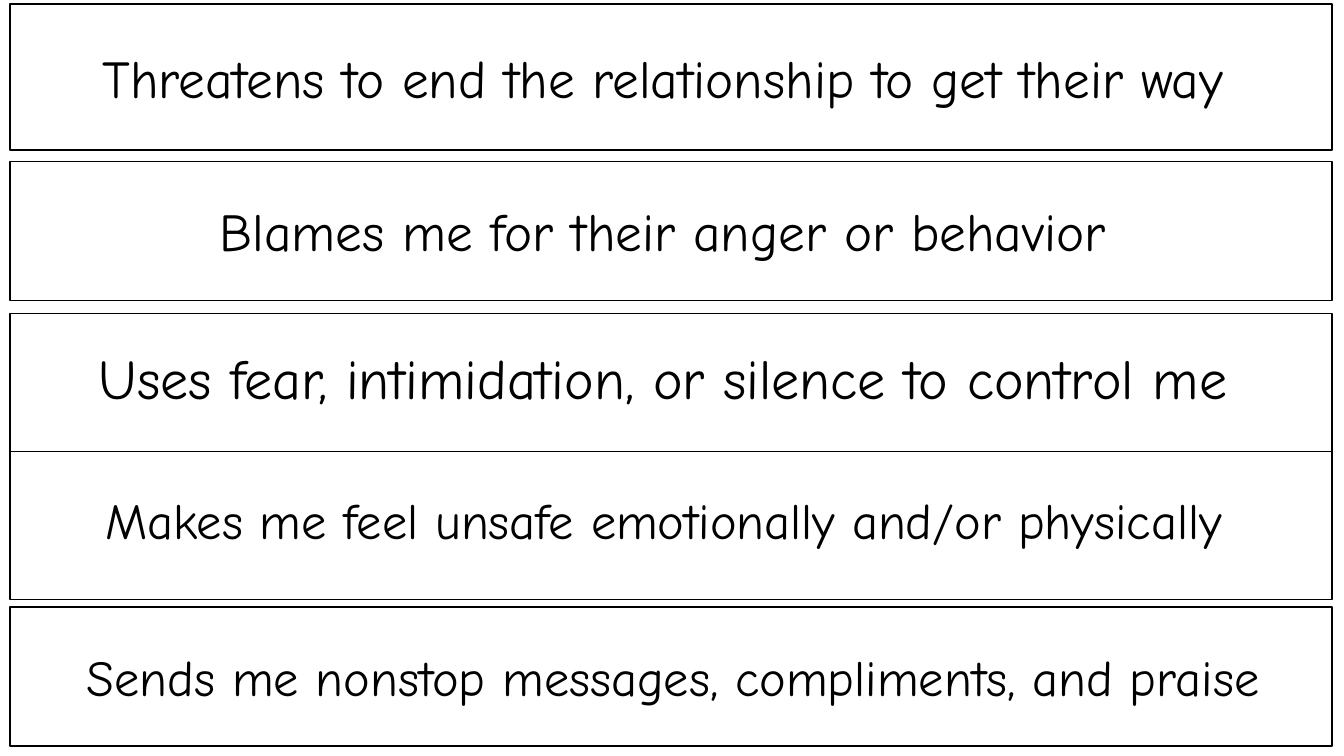
from dataclasses import dataclass

from pptx import Presentation
from pptx.dml.color import RGBColor
from pptx.enum.shapes import MSO_SHAPE
from pptx.enum.text import MSO_AUTO_SIZE, PP_ALIGN
from pptx.util import Inches, Pt

RECTANGLE = MSO_SHAPE.RECTANGLE
CENTER = PP_ALIGN.CENTER
GROW = MSO_AUTO_SIZE.SHAPE_TO_FIT_TEXT
BLANK_LAYOUT = 6
STRIP_LEFT = 0.1
STRIP_WIDTH = 13.11

STRIPS = [
    (0.04, 1.45, 0.11, 0.4, 0.74, 38, "Threatens to end the relationship to get their way "),
    (1.6, 1.38, 0.11, 1.92, 0.74, 38, "Blames me for their anger or behavior "),
    (3.11, 1.38, 0.11, 3.36, 0.77, 40, "Uses fear, intimidation, or silence to control me "),
    (4.48, 1.47, 0.11, 4.8, 0.71, 36, "Makes me feel unsafe emotionally and/or physically "),
    (6.02, 1.38, 0.12, 6.36, 0.71, 36, "Sends me nonstop messages, compliments, and praise"),
]


@dataclass(frozen=True)
class Theme:
    font: str = "Comic Neue"
    ink: RGBColor = RGBColor(0, 0, 0)
    paper: RGBColor = RGBColor(255, 255, 255)
    border: float = 1


def write_text(text_frame, text, *, font, size, color, alignment):
    paragraph = text_frame.paragraphs[0]
    paragraph.alignment = alignment
    run = paragraph.add_run()
    run.text = text
    run.font.name = font
    run.font.size = Pt(size)
    run.font.color.rgb = color


class StripSheet:
    """Draws bordered strips and their statements on one slide."""

    def __init__(self, slide, theme):
        self.slide = slide
        self.theme = theme

    def add_strip(self, top, height):
        shape = self.slide.shapes.add_shape(
            RECTANGLE, Inches(STRIP_LEFT), Inches(top), Inches(STRIP_WIDTH), Inches(height)
        )
        shape.shadow.inherit = False
        shape.fill.solid()
        shape.fill.fore_color.rgb = self.theme.paper
        shape.line.color.rgb = self.theme.ink
        shape.line.width = Pt(self.theme.border)

    def add_statement(self, text, left, top, height, size):
        text_box = self.slide.shapes.add_textbox(
            Inches(left), Inches(top), Inches(STRIP_WIDTH), Inches(height)
        )
        text_frame = text_box.text_frame
        text_frame.word_wrap = True
        text_frame.auto_size = GROW
        write_text(text_frame, text, font=self.theme.font, size=size,
                   color=self.theme.ink, alignment=CENTER)


def main():
    presentation = Presentation()
    presentation.slide_width = Inches(13.33)
    presentation.slide_height = Inches(7.5)
    slide = presentation.slides.add_slide(presentation.slide_layouts[BLANK_LAYOUT])
    sheet = StripSheet(slide, Theme())
    for strip_top, strip_height, text_left, text_top, text_height, size, text in STRIPS:
        sheet.add_strip(strip_top, strip_height)
        sheet.add_statement(text, text_left, text_top, text_height, size)
    presentation.save("out.pptx")


if __name__ == "__main__":
    main()
